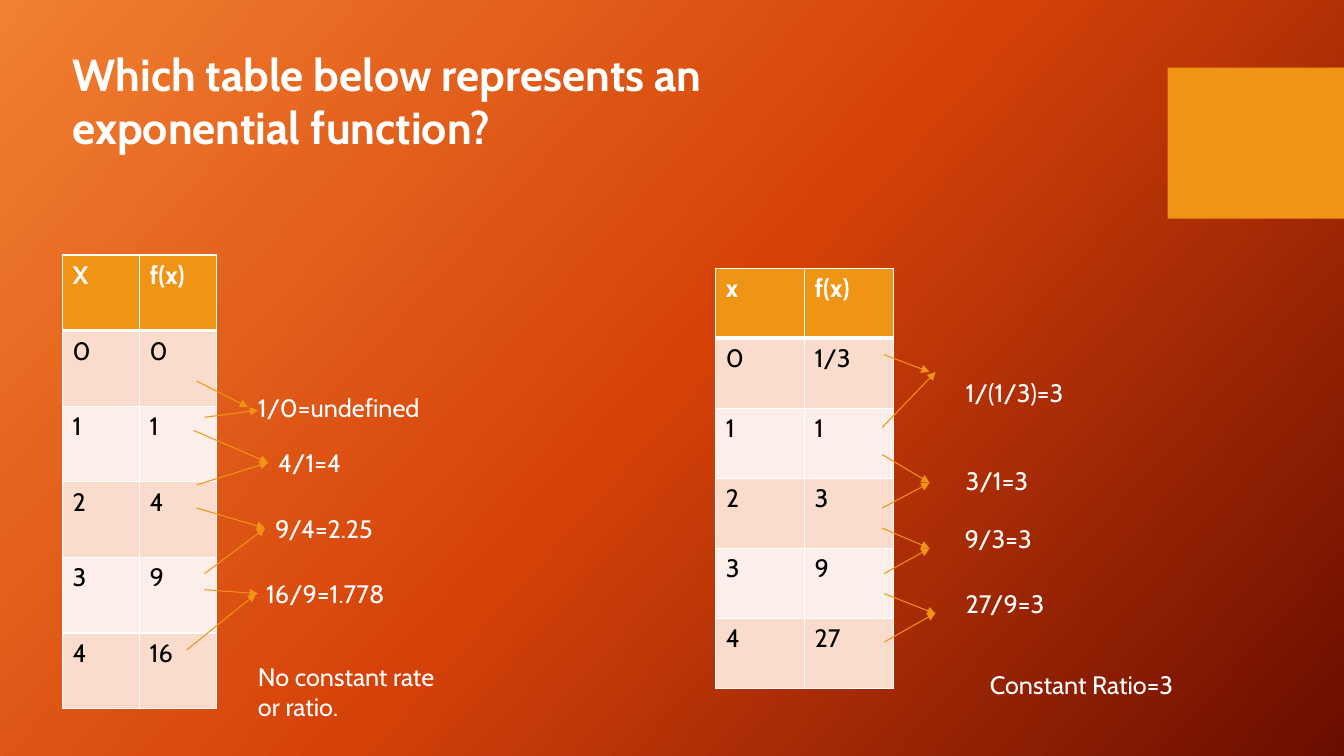
from copy import deepcopy
from dataclasses import dataclass

from lxml import etree
from pptx import Presentation
from pptx import util as u
from pptx.dml.color import RGBColor
from pptx.enum import shapes, text
from pptx.oxml.ns import qn


@dataclass(frozen=True)
class Theme:
    font: str = "Cabin"
    title_size: int = 32
    body_size: int = 18
    light: str = "FFFFFF"
    dark: str = "000000"
    accent: str = "F09415"
    bands: tuple = ("F9DCCC", "FCEEE8")
    backdrop: tuple = ((0, "F18031"), (0.5, "D54209"), (1, "6A0D00"))
    backdrop_angle: int = 318
    rule: float = 1
    header_rule: float = 3
    arrow: float = 0.75


THEME = Theme()
COLUMNS, ROWS = 133.3, 75  # grid cells across and down the slide
WIDTH, HEIGHT = u.Inches(13.33), u.Inches(7.5)
LABEL_ROWS = 4

LEFT_TABLE = [("X", "f(x)"), ("0", "0"), ("1", "1"), ("2", "4"), ("3", "9"), ("4", "16")]
RIGHT_TABLE = [("x", "f(x)"), ("0", "1/3"), ("1", "1"), ("2", "3"), ("3", "9"), ("4", "27")]

# Label, its column, row and width, then arrows as (start, end);
# an end of None joins the arrow to the label's left side.
RATIOS = [
    ("1/0=undefined", 24.6, 38.4, 18.6,
     [((19.5, 37.8), None), ((20.3, 41.4), (25.6, 40.7))]),
    ("4/1=4", 26.6, 43.9, 16.7, [((19.2, 42.7), None), ((19.5, 48.1), None)]),
    ("9/4=2.25", 26.3, 50.4, 16.1, [((19.5, 50.4), None), ((20.3, 56.9), None)]),
    ("16/9=1.778", 25.4, 56.9, 15.9,
     [((20.3, 58.5), (25.6, 58.9)), ((18.5, 64.5), None)]),
    ("1/(1/3)=3", 94.8, 36.9, 16.2,
     [((87.7, 35.2), (92.2, 36.9)), ((87.5, 42.4), (92.8, 36.9))]),
    ("3/1=3", 94.8, 45.7, 13.5,
     [((87.5, 45.1), (92.2, 47.9)), ((87.5, 50.4), (92.2, 47.9))]),
    ("9/3=3", 94.7, 51.4, 14.3,
     [((87.5, 52.4), (92.2, 54.4)), ((87.7, 56.9), (92.2, 54.4))]),
    ("27/9=3", 94.8, 57.9, 10.5,
     [((87.7, 58.9), (92.8, 60.9)), ((87.7, 63.7), (92.8, 60.8))]),
]


def across(columns):
    return round(WIDTH * columns / COLUMNS)


def down(rows):
    return round(HEIGHT * rows / ROWS)


def area(column, row, columns, rows):
    return across(column), down(row), across(columns), down(rows)


def apply(target, values):
    for name, value in values.items():
        setattr(target, name, value)


def write(frame, words, size, color, bold=False):
    span = frame.paragraphs[0].add_run()
    span.text = words
    apply(span.font, {"name": THEME.font, "size": u.Pt(size), "bold": bold})
    span.font.color.rgb = RGBColor.from_string(color)


def paint_background(page):
    fill = page.background.fill
    fill.gradient()
    fill.gradient_angle = THEME.backdrop_angle
    stop_list = next(page.element.iter(qn("a:gsLst")))
    stop_list.insert(1, deepcopy(stop_list[0]))
    for stop, (position, color) in zip(fill.gradient_stops, THEME.backdrop):
        stop.position = position
        stop.color.rgb = RGBColor.from_string(color)


def add_block(page, *place):
    block = page.shapes.add_shape(shapes.MSO_SHAPE.RECTANGLE, *area(*place))
    block.shadow.inherit = False
    block.fill.solid()
    block.fill.fore_color.rgb = RGBColor.from_string(THEME.accent)
    block.line.fill.background()


def add_label(page, words, *place, size=THEME.body_size, bold=False):
    box = page.shapes.add_textbox(*area(*place))
    apply(box.text_frame, {"word_wrap": True,
                           "auto_size": text.MSO_AUTO_SIZE.SHAPE_TO_FIT_TEXT})
    write(box.text_frame, words, size, THEME.light, bold)
    return box


def add_arrow(page, start, end, label):
    column, row = end or start
    arrow = page.shapes.add_connector(
        shapes.MSO_CONNECTOR.STRAIGHT, across(start[0]), down(start[1]),
        across(column), down(row))
    if end is None:
        arrow.end_connect(label, 1)
    arrow.line.width = u.Pt(THEME.arrow)
    arrow.line.color.rgb = RGBColor.from_string(THEME.accent)
    etree.SubElement(arrow.line._get_or_add_ln(), qn("a:tailEnd"), type="triangle")
    etree.SubElement(arrow.element.spPr, qn("a:effectLst"))


def draw_borders(cell, widths):
    """Add the borders ahead of the fill, as the cell's schema requires."""
    properties = cell._tc.get_or_add_tcPr()
    for index, (side, width) in enumerate(widths.items()):
        border = etree.Element(qn(f"a:ln{side}"), w=str(u.Pt(width)))
        fill = etree.SubElement(border, qn("a:solidFill"))
        etree.SubElement(fill, qn("a:srgbClr"), val=THEME.light)
        properties.insert(index, border)


def add_function_table(page, values, *place):
    frame = page.shapes.add_table(len(values), len(values[0]), *area(*place))
    for r, pair in enumerate(values):
        header = r == 0
        fill = THEME.accent if header else THEME.bands[(r - 1) % 2]
        for c, value in enumerate(pair):
            cell = frame.table.cell(r, c)
            cell.fill.solid()
            cell.fill.fore_color.rgb = RGBColor.from_string(fill)
            draw_borders(cell, {
                "L": THEME.rule, "R": THEME.rule,
                "T": THEME.header_rule if r == 1 else THEME.rule,
                "B": THEME.header_rule if header else THEME.rule})
            write(cell.text_frame, value, THEME.body_size,
                  THEME.light if header else THEME.dark, header)


def main():
    deck = Presentation()
    apply(deck, {"slide_width": WIDTH, "slide_height": HEIGHT})
    page = deck.slides.add_slide(deck.slide_layouts[6])
    paint_background(page)
    add_block(page, 115.8, 6.7, 17.5, 15)
    add_function_table(page, LEFT_TABLE, 6.2, 25.3, 15.3, 45)
    add_function_table(page, RIGHT_TABLE, 71, 26.6, 17.6, 41.7)
    add_label(page, "Which table below represents an exponential function?",
              6.2, 4.1, 64.9, 11.8, size=THEME.title_size, bold=True)
    for words, column, row, columns, arrows in RATIOS:
        label = add_label(page, words, column, row, columns, LABEL_ROWS)
        for start, end in arrows:
            add_arrow(page, start, end, label)
    add_label(page, "No constant rate or ratio.", 24.6, 65.1, 21.1, 7.1)
    add_label(page, "Constant Ratio=3", 97.2, 65.9, 21.1, LABEL_ROWS)
    deck.save("out.pptx")


if __name__ == "__main__":
    main()
